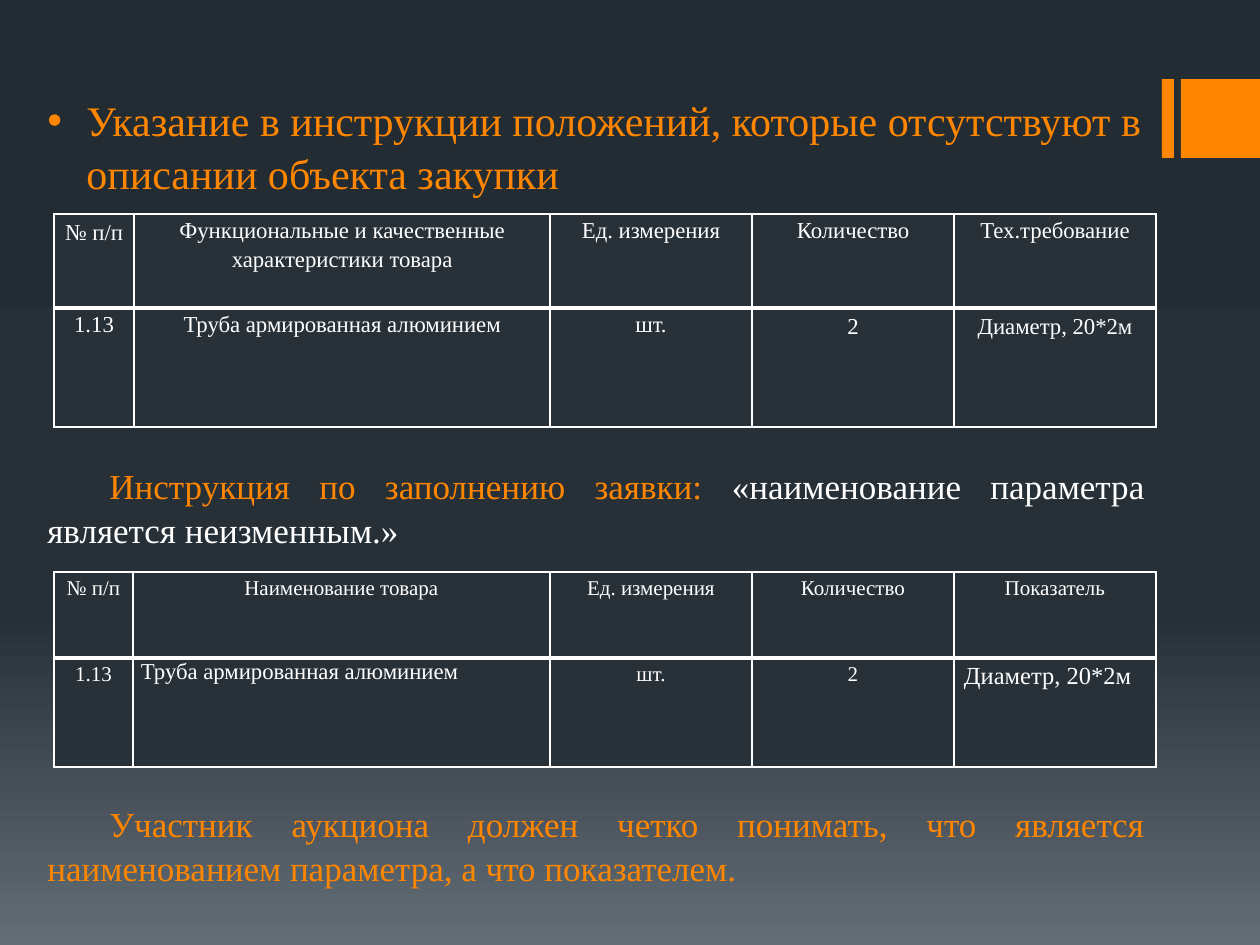
import copy

import pptx
import pptx.dml.color
import pptx.enum.shapes
import pptx.enum.text
import pptx.oxml.ns
import pptx.util
from lxml import etree

PX = 914400 / 126
ORANGE = pptx.dml.color.RGBColor(0xFF, 0x86, 0x00)
WHITE = pptx.dml.color.RGBColor(0xFF, 0xFF, 0xFF)
CELL = pptx.dml.color.RGBColor(0x28, 0x31, 0x38)
SKY = [
    (0, pptx.dml.color.RGBColor(0x24, 0x2C, 0x33)),
    (0.65, pptx.dml.color.RGBColor(0x27, 0x30, 0x37)),
    (1, pptx.dml.color.RGBColor(0x63, 0x6D, 0x76)),
]
FONT = "Times New Roman"
CENTER = pptx.enum.text.PP_ALIGN.CENTER
LEFT = pptx.enum.text.PP_ALIGN.LEFT
JUSTIFY = pptx.enum.text.PP_ALIGN.JUSTIFY
qn = pptx.oxml.ns.qn


def px(*lengths):
    return [pptx.util.Emu(round(length * PX)) for length in lengths]


def add_border(cell, side, points):
    line = etree.SubElement(cell._tc.get_or_add_tcPr(), qn("a:ln" + side),
                            w=str(pptx.util.Pt(points)))
    fill = etree.SubElement(line, qn("a:solidFill"))
    etree.SubElement(fill, qn("a:srgbClr"), val=str(WHITE))


deck = pptx.Presentation()
deck.slide_width, deck.slide_height = px(1260, 945)
slide = deck.slides.add_slide(deck.slide_layouts[6])

# Background gradient, dark at the top
background = slide.background.fill
background.gradient()
background.gradient_angle = 270
stop_list = next(slide.element.iter(qn("a:gsLst")))
stop_list.append(copy.deepcopy(stop_list[0]))
for stop, (position, color) in zip(background.gradient_stops, SKY):
    stop.position = position
    stop.color.rgb = color

# Orange marks at the right edge
for left, width in [(1162, 12), (1181, 79)]:
    mark = slide.shapes.add_shape(pptx.enum.shapes.MSO_SHAPE.RECTANGLE,
                                  *px(left, 79, width, 79))
    mark.shadow.inherit = False
    mark.fill.solid()
    mark.fill.fore_color.rgb = ORANGE
    mark.line.fill.background()

# Body text: gaps between paragraphs leave room for the tables
body = slide.shapes.add_textbox(*px(35, 45, 1122, 844)).text_frame
body.word_wrap = True
body.margin_top, = px(47)
statements = [
    (24, 0, LEFT, 39, -39,
     [("Указание в инструкции положений, которые отсутствуют в описании объекта закупки", ORANGE)]),
    (20, 151, JUSTIFY, 0, 62,
     [("Инструкция по заполнению заявки: ", ORANGE),
      ("«наименование параметра является неизменным.»", WHITE)]),
    (20, 143, JUSTIFY, 0, 62,
     [("Участник аукциона должен четко понимать, что является наименованием параметра, "
       "а что показателем.", ORANGE)]),
]
for index, (size, gap, align, margin, indent, parts) in enumerate(statements):
    paragraph = body.add_paragraph() if index else body.paragraphs[0]
    paragraph.alignment = align
    paragraph.line_spacing = 1.05
    paragraph.space_before = pptx.util.Pt(gap)
    paragraph.font.size = pptx.util.Pt(size)
    paragraph.font.name = FONT
    properties = paragraph._p.get_or_add_pPr()
    for name, length in zip(("marL", "indent"), px(margin, indent)):
        properties.set(name, str(length))
    for text, color in parts:
        run = paragraph.add_run()
        run.text = text
        run.font.color.rgb = color
bullet = body.paragraphs[0]._p.get_or_add_pPr()
etree.SubElement(bullet, qn("a:buFont"), typeface="Arial")
etree.SubElement(bullet, qn("a:buChar"), char="•")

# Tables: top, columns, rows, size, tight and roomy insets, wording,
# and the cells of the last row that have their own alignment and size
tables = [
    (214, [80, 416, 202, 202, 202], [94, 119], 13, (9, 1, 9, 0), (11, 6, 11, 6),
     [["№ п/п", "Функциональные и качественные характеристики товара",
       "Ед. измерения", "Количество", "Тех.требование"],
      ["1.13", "Труба армированная алюминием", "шт.", "2", "Диаметр, 20*2м"]],
     {}),
    (572, [79, 417, 202, 202, 202], [86, 109], 12, (8, 1, 8, 0), (10, 5, 10, 5),
     [["№ п/п", "Наименование товара", "Ед. измерения", "Количество", "Показатель"],
      ["1.13", "Труба армированная алюминием", "шт.", "2", "Диаметр, 20*2м"]],
     {(1, 1): (LEFT, 13), (1, 4): (LEFT, 14)}),
]
ROOMY_CELLS = {(0, 0), (1, 3), (1, 4)}
for top, columns, rows, size, tight, roomy, wording, special in tables:
    table = slide.shapes.add_table(len(rows), len(columns),
                                   *px(54, top, sum(columns), sum(rows))).table
    table.first_row = False
    table.horz_banding = False
    for column, width in zip(table.columns, px(*columns)):
        column.width = width
    for row, height in zip(table.rows, px(*rows)):
        row.height = height
    for r, texts in enumerate(wording):
        for c, text in enumerate(texts):
            cell = table.cell(r, c)
            insets = roomy if (r, c) in ROOMY_CELLS else tight
            (cell.margin_left, cell.margin_top,
             cell.margin_right, cell.margin_bottom) = px(*insets)
            for side, points in zip("LRTB", (1, 1, 3 if r else 1, 1 if r else 3)):
                add_border(cell, side, points)
            cell.fill.solid()
            cell.fill.fore_color.rgb = CELL
            cell.text = text
            align, points = special.get((r, c), (CENTER, size))
            paragraph = cell.text_frame.paragraphs[0]
            paragraph.alignment = align
            if insets == tight and align == CENTER:
                paragraph.line_spacing = 1.15
            paragraph.font.size = pptx.util.Pt(points)
            paragraph.font.name = FONT
            paragraph.font.color.rgb = WHITE

deck.save("out.pptx")
